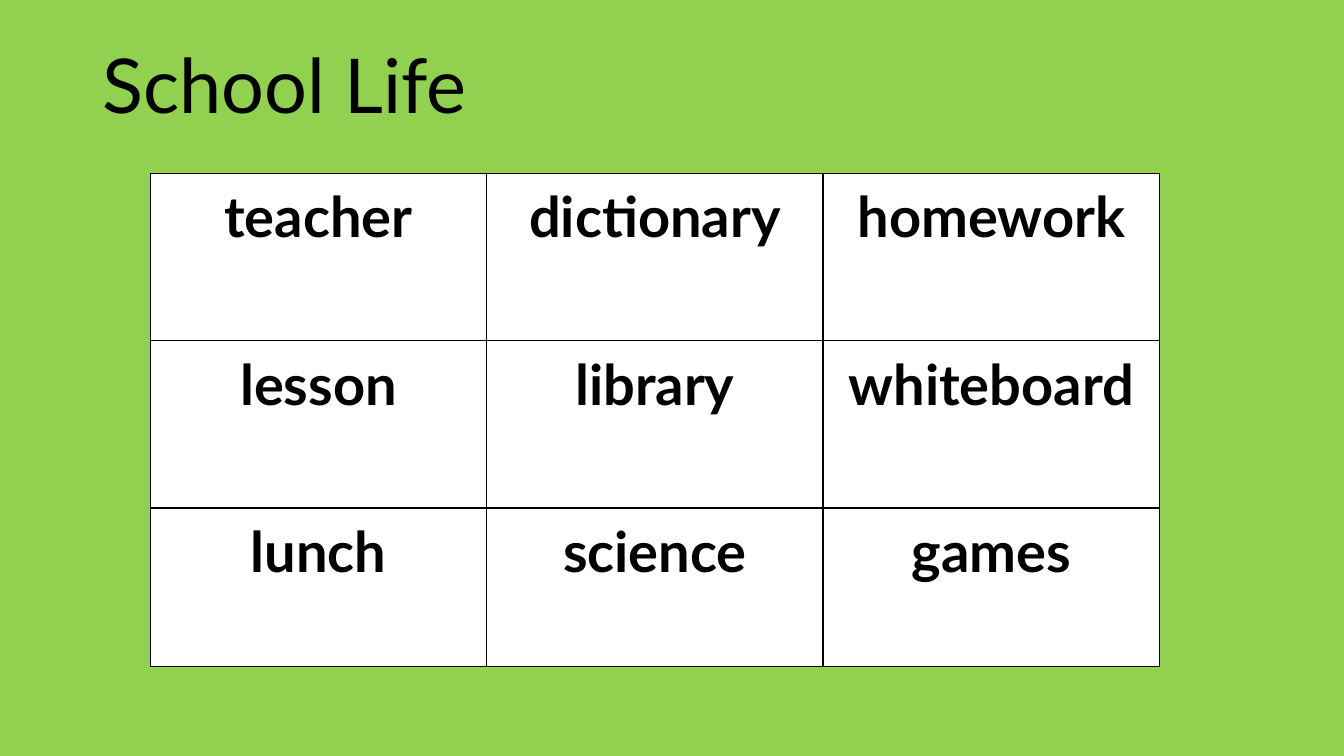
import pptx
import pptx.dml.color
import pptx.enum.text
import pptx.oxml
import pptx.oxml.ns
import pptx.util
from dataclasses import dataclass

Inches = pptx.util.Inches
Align = pptx.enum.text.PP_ALIGN
Anchor = pptx.enum.text.MSO_ANCHOR


@dataclass(frozen=True)
class Theme:
    background: str = "92D050"
    cell: str = "FFFFFF"
    ink: str = "000000"
    font: str = "Lato"
    title_size: int = 54
    word_size: int = 40
    border_width: int = 1


THEME = Theme()

WORDS = [
    ["teacher", "dictionary", "homework"],
    ["lesson", "library", "whiteboard"],
    ["lunch", "science", "games"],
]
ROW_HEIGHTS = [1.66, 1.66, 1.57]


def rgb(value):
    return pptx.dml.color.RGBColor.from_string(value)


def write_text(text_frame, text, *, size, bold=False, align=Align.LEFT, line_spacing=1.0):
    paragraph = text_frame.paragraphs[0]
    paragraph.alignment = align
    paragraph.line_spacing = line_spacing
    run = paragraph.add_run()
    run.text = text
    run.font.name = THEME.font
    run.font.size = pptx.util.Pt(size)
    run.font.bold = bold
    run.font.color.rgb = rgb(THEME.ink)


def set_borders(cell):
    properties = cell._tc.get_or_add_tcPr()
    width = pptx.util.Pt(THEME.border_width)
    # Borders come before the fill in the cell properties
    for index, side in enumerate(("lnL", "lnR", "lnT", "lnB")):
        border = pptx.oxml.parse_xml(
            f'<a:{side} {pptx.oxml.ns.nsdecls("a")} w="{width}"><a:solidFill>'
            f'<a:srgbClr val="{THEME.ink}"/></a:solidFill></a:{side}>'
        )
        properties.insert(index, border)


def add_title(slide, text, left, top, width, height):
    box = slide.shapes.add_textbox(Inches(left), Inches(top), Inches(width), Inches(height))
    box.text_frame.word_wrap = True
    box.text_frame.vertical_anchor = Anchor.BOTTOM
    write_text(box.text_frame, text, size=THEME.title_size, line_spacing=0.9)


def add_word_grid(slide, words, row_heights, left, top, width):
    column_count = len(words[0])
    frame = slide.shapes.add_table(
        len(words), column_count,
        Inches(left), Inches(top), Inches(width), Inches(sum(row_heights)),
    )
    table = frame.table
    table.first_row = False
    table.horz_banding = False
    for column in table.columns:
        column.width = Inches(width / column_count)
    for row, height, row_words in zip(table.rows, row_heights, words):
        row.height = Inches(height)
        for cell, word in zip(row.cells, row_words):
            cell.margin_left = cell.margin_right = Inches(0.18)
            cell.margin_top = cell.margin_bottom = Inches(0.09)
            cell.fill.solid()
            cell.fill.fore_color.rgb = rgb(THEME.cell)
            set_borders(cell)
            write_text(cell.text_frame, word, size=THEME.word_size, bold=True, align=Align.CENTER)


def main():
    presentation = pptx.Presentation()
    presentation.slide_width = Inches(13.33)
    presentation.slide_height = Inches(7.5)
    slide = presentation.slides.add_slide(presentation.slide_layouts[6])

    # Background
    slide.background.fill.solid()
    slide.background.fill.fore_color.rgb = rgb(THEME.background)

    # Title and vocabulary grid
    add_title(slide, "School Life", 0.92, 0.32, 11.5, 1.02)
    add_word_grid(slide, WORDS, ROW_HEIGHTS, 1.49, 1.72, 10.01)

    presentation.save("out.pptx")


if __name__ == "__main__":
    main()
